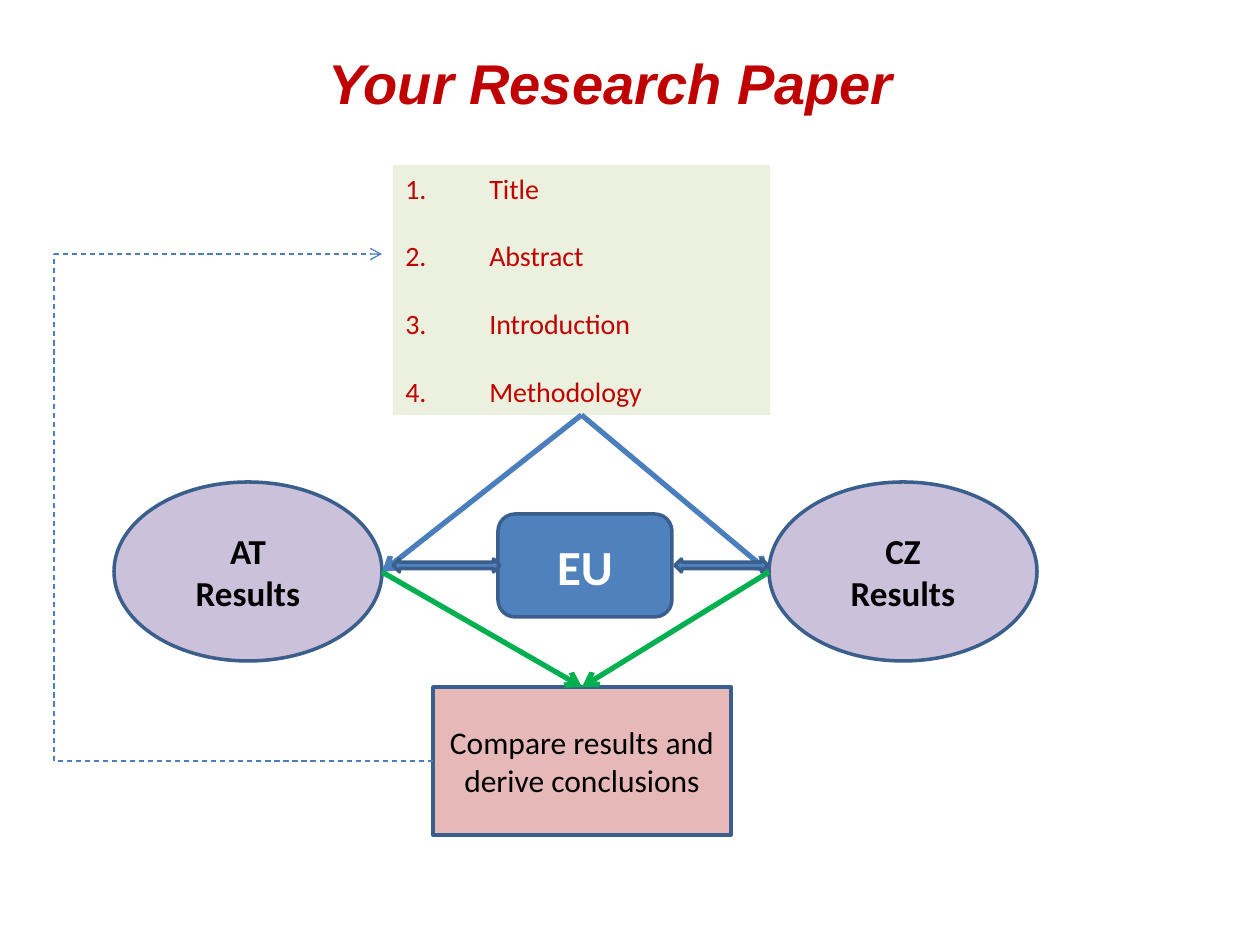
from dataclasses import dataclass

from lxml.etree import SubElement
from pptx import Presentation
from pptx.dml.color import RGBColor
from pptx.enum.dml import MSO_LINE
from pptx.enum.shapes import MSO_CONNECTOR, MSO_SHAPE
from pptx.enum.text import MSO_ANCHOR, MSO_AUTO_SIZE, PP_ALIGN
from pptx.oxml.ns import qn
from pptx.util import Emu, Pt

PX_PER_INCH = 126


def px(length):
    return Emu(round(length * 914400 / PX_PER_INCH))


@dataclass(frozen=True)
class Theme:
    heading_font: str = "Arial"
    body_font: str = "Calibri"
    accent: str = "C00000"
    ink: str = "000000"
    light: str = "FFFFFF"
    outline_fill: str = "EBF1DE"
    country_fill: str = "CCC1DA"
    conclusion_fill: str = "E6B9B8"
    hub_fill: str = "4F81BD"
    border: str = "3A5F8C"
    flow: str = "4B7EBC"
    result_flow: str = "00B050"
    title_size: int = 32
    hub_size: int = 28
    country_size: int = 20
    conclusion_size: int = 18
    outline_size: int = 16
    border_width: float = 2
    flow_width: float = 3
    feedback_width: float = 0.75


class SlideBuilder:
    def __init__(self, slide, theme):
        self.slide = slide
        self.theme = theme

    def text_run(self, paragraph, text, size, color, font=None, bold=False, italic=False):
        run = paragraph.add_run()
        run.text = text
        run.font.name = font or self.theme.body_font
        run.font.size = Pt(size)
        run.font.bold = bold
        run.font.italic = italic
        run.font.color.rgb = RGBColor.from_string(color)

    def title(self, text, box):
        heading = self.slide.shapes.title
        heading.left, heading.top, heading.width, heading.height = map(px, box)
        frame = heading.text_frame
        frame.auto_size = MSO_AUTO_SIZE.NONE
        frame.vertical_anchor = MSO_ANCHOR.MIDDLE
        frame.margin_bottom = px(16)
        paragraph = frame.paragraphs[0]
        paragraph.alignment = PP_ALIGN.CENTER
        self.text_run(paragraph, text, self.theme.title_size, self.theme.accent,
                      self.theme.heading_font, bold=True, italic=True)

    def block(self, kind, box, fill, bordered=True):
        block = self.slide.shapes.add_shape(kind, *map(px, box))
        block.shadow.inherit = False
        block.fill.solid()
        block.fill.fore_color.rgb = RGBColor.from_string(fill)
        if bordered:
            block.line.color.rgb = RGBColor.from_string(self.theme.border)
            block.line.width = Pt(self.theme.border_width)
        else:
            block.line.fill.background()
        return block

    def label(self, block, lines, size, color, bold=False):
        frame = block.text_frame
        frame.word_wrap = True
        frame.vertical_anchor = MSO_ANCHOR.MIDDLE
        for index, line in enumerate(lines):
            paragraph = frame.add_paragraph() if index else frame.paragraphs[0]
            paragraph.alignment = PP_ALIGN.CENTER
            self.text_run(paragraph, line, size, color, bold=bold)

    def numbered_list(self, block, items, indent, gap):
        """Number the items with a hanging indent in px and a gap in points."""
        frame = block.text_frame
        frame.word_wrap = True
        frame.vertical_anchor = MSO_ANCHOR.TOP
        for index, item in enumerate(items):
            paragraph = frame.add_paragraph() if index else frame.paragraphs[0]
            paragraph.alignment = PP_ALIGN.LEFT
            if index:
                paragraph.space_before = Pt(gap)
            properties = paragraph._p.get_or_add_pPr()
            properties.set("marL", str(px(indent)))
            properties.set("indent", str(-px(indent)))
            SubElement(properties, qn("a:buFont"), typeface="+mj-lt")
            SubElement(properties, qn("a:buAutoNum"), type="arabicPeriod")
            self.text_run(paragraph, item, self.theme.outline_size, self.theme.accent)

    def connector(self, start, end, color, width, kind=MSO_CONNECTOR.STRAIGHT,
                  dashed=False, arrow=True):
        link = self.slide.shapes.add_connector(kind, *map(px, (*start, *end)))
        link.line.color.rgb = RGBColor.from_string(color)
        link.line.width = Pt(width)
        if dashed:
            link.line.dash_style = MSO_LINE.DASH
        if arrow:
            SubElement(link.line._get_or_add_ln(), qn("a:tailEnd"), type="arrow")
        SubElement(link._element.spPr, qn("a:effectLst"))
        return link

    def corner(self, start, end, color, width):
        """Dashed line that runs left from start, then up to end."""
        link = self.connector(end, start, color, width, MSO_CONNECTOR.ELBOW,
                              dashed=True, arrow=False)
        properties = link._element.spPr
        properties.find(qn("a:prstGeom")).set("prst", "bentConnector2")
        properties.find(qn("a:xfrm")).set("rot", str(180 * 60000))


def main():
    theme = Theme()
    deck = Presentation()
    deck.slide_width, deck.slide_height = px(1260), px(945)
    builder = SlideBuilder(deck.slides.add_slide(deck.slide_layouts[5]), theme)

    builder.title("Your Research Paper", (44, 37, 1134, 100))

    outline = builder.block(MSO_SHAPE.RECTANGLE, (393, 165, 377, 250),
                            theme.outline_fill, bordered=False)
    builder.numbered_list(outline, ["Title", "Abstract", "Introduction", "Methodology"],
                          indent=84, gap=19.5)

    country_top, country_width, country_height = 482, 268, 179
    country_middle = country_top + country_height // 2 + 1
    at_left, cz_left = 114, 769
    for country, left in (("AT", at_left), ("CZ", cz_left)):
        ellipse = builder.block(MSO_SHAPE.OVAL,
                                (left, country_top, country_width, country_height),
                                theme.country_fill)
        builder.label(ellipse, [country, "Results"], theme.country_size, theme.ink, bold=True)

    conclusion = builder.block(MSO_SHAPE.RECTANGLE, (433, 687, 298, 148),
                               theme.conclusion_fill)
    builder.label(conclusion, ["Compare results and derive conclusions"],
                  theme.conclusion_size, theme.ink)

    for inner_edge in (at_left + country_width, cz_left):
        country_side = (inner_edge, country_middle)
        to_country = builder.connector((582, 415), country_side, theme.flow, theme.flow_width)
        to_country.begin_connect(outline, 2)
        to_conclusion = builder.connector(country_side, (582, 687),
                                          theme.result_flow, theme.flow_width)
        to_conclusion.end_connect(conclusion, 0)

    feedback_turn = (54, 254)
    builder.corner((433, 761), feedback_turn, theme.flow, theme.feedback_width)
    builder.connector(feedback_turn, (382, 254), theme.flow, theme.feedback_width, dashed=True)

    hub = builder.block(MSO_SHAPE.ROUNDED_RECTANGLE, (498, 514, 174, 103), theme.hub_fill)
    builder.label(hub, ["EU"], theme.hub_size, theme.light, bold=True)
    for left, width in ((393, 107), (675, 93)):
        builder.block(MSO_SHAPE.LEFT_RIGHT_ARROW, (left, 559, width, 13), theme.hub_fill)

    deck.save("out.pptx")


if __name__ == "__main__":
    main()
